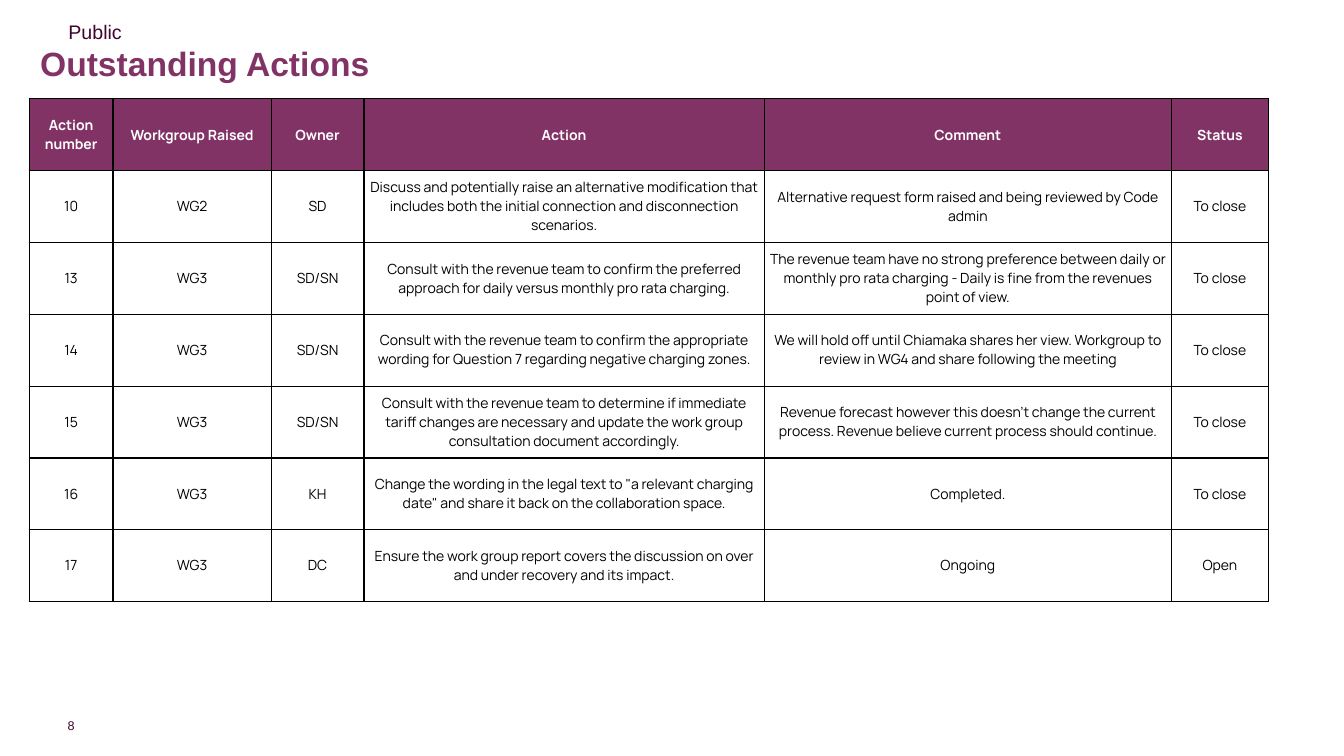
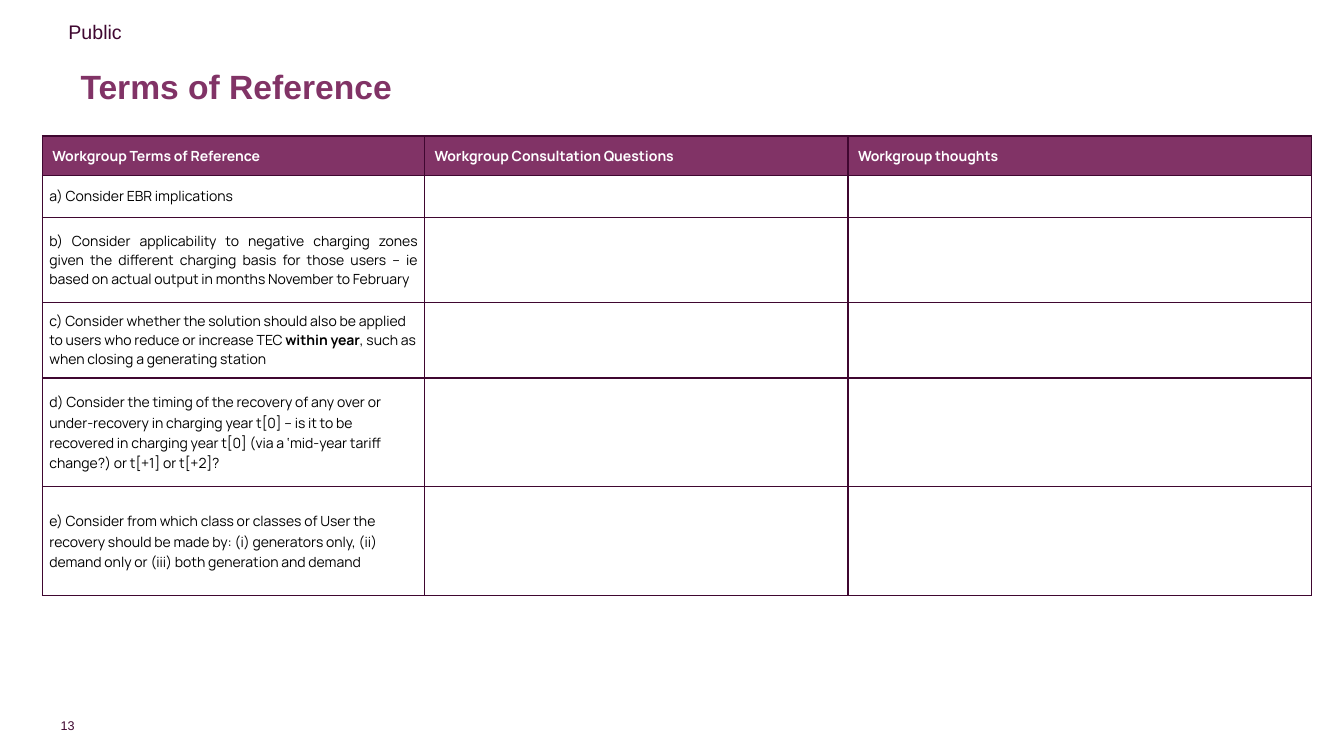
from lxml.etree import SubElement
from pptx import Presentation
from pptx.dml.color import RGBColor
from pptx.enum.text import MSO_ANCHOR, PP_ALIGN
from pptx.oxml.ns import qn
from pptx.util import Inches, Pt

W, H = 13.33, 7.5
PLUM, DARK, BLACK, WHITE = "813366", "3F0730", "000000", "FFFFFF"
HEAD_FONT, BODY_FONT = "Arial", "Manrope"
CENTER, RIGHT, JUSTIFY, LEFT = (PP_ALIGN.CENTER, PP_ALIGN.RIGHT,
                                PP_ALIGN.JUSTIFY, PP_ALIGN.LEFT)

ACTIONS = [
    ["Action number", "Workgroup Raised", "Owner", "Action", "Comment", "Status"],
    ["10", "WG2", "SD",
     "Discuss and potentially raise an alternative modification that includes "
     "both the initial connection and disconnection scenarios.",
     "Alternative request form raised and being reviewed by Code admin", "To close"],
    ["13", "WG3", "SD/SN",
     "Consult with the revenue team to confirm the preferred approach for daily "
     "versus monthly pro rata charging.",
     "The revenue team have no strong preference between daily or monthly pro rata "
     "charging - Daily is fine from the revenues point of view.", "To close"],
    ["14", "WG3", "SD/SN",
     "Consult with the revenue team to confirm the appropriate wording for "
     "Question 7 regarding negative charging zones.",
     "We will hold off until Chiamaka shares her view. Workgroup to review in WG4 "
     "and share following the meeting", "To close"],
    ["15", "WG3", "SD/SN",
     "Consult with the revenue team to determine if immediate tariff changes are "
     "necessary and update the work group consultation document accordingly.",
     "Revenue forecast however this doesn't change the current process. Revenue "
     "believe current process should continue.", "To close"],
    ["16", "WG3", "KH",
     'Change the wording in the legal text to "a relevant charging date" and share '
     "it back on the collaboration space.", "Completed.", "To close"],
    ["17", "WG3", "DC",
     "Ensure the work group report covers the discussion on over and under "
     "recovery and its impact.", "Ongoing", "Open"],
]

TERMS_HEADER = ["Workgroup Terms of Reference", "Workgroup Consultation Questions",
                "Workgroup thoughts"]
# Each term: runs of (text, bold), alignment, line spacing, space after
TERMS = [
    ([("a) Consider EBR implications", False)], JUSTIFY, 1.0, 6),
    ([("b) Consider applicability to negative charging zones given the different "
       "charging basis for those users – ie based on actual output in months "
       "November to February", False)], JUSTIFY, 1.0, 6),
    ([("c) Consider whether the solution should also be applied to users who reduce "
       "or increase TEC ", False), ("within year", True),
      (", such as when closing a generating station", False)], LEFT, 1.0, 6),
    ([("d) Consider the timing of the recovery of any over or under-recovery in "
       "charging year t[0] – is it to be recovered in charging year t[0] (via a "
       "‘mid-year tariff change?) or t[+1] or t[+2]?", False)], LEFT, 1.07, 8),
    ([("e) Consider from which class or classes of User the recovery should be made "
       "by: (i) generators only, (ii) demand only or (iii) both generation and "
       "demand", False)], LEFT, 1.07, 8),
]


def rgb(value):
    return RGBColor.from_string(value)


def write(tf, text, size=10, font=BODY_FONT, color=BLACK, bold=False,
          align=LEFT, spacing=None, after=None):
    """Fill the first paragraph with a string or a list of (text, bold) runs."""
    p = tf.paragraphs[0]
    p.alignment = align
    if spacing:
        p.line_spacing = spacing
    if after:
        p.space_after = Pt(after)
    for part, strong in [(text, bold)] if isinstance(text, str) else text:
        r = p.add_run()
        r.text = part
        r.font.name, r.font.size, r.font.bold = font, Pt(size), strong
        r.font.color.rgb = rgb(color)


def set_margins(frame, x, y):
    frame.margin_left = frame.margin_right = Inches(x)
    frame.margin_top = frame.margin_bottom = Inches(y)


def add_text(s, text, box, anchor=MSO_ANCHOR.TOP, wrap=True, margins=(0.1, 0.05), **fmt):
    tf = s.shapes.add_textbox(*map(Inches, box)).text_frame
    tf.word_wrap, tf.vertical_anchor = wrap, anchor
    set_margins(tf, *margins)
    write(tf, text, font=HEAD_FONT, **fmt)


def set_borders(cell, color):
    tcPr = cell._tc.get_or_add_tcPr()
    for side in ("lnL", "lnR", "lnT", "lnB"):
        ln = SubElement(tcPr, qn(f"a:{side}"), w=str(Pt(1)))
        SubElement(SubElement(ln, qn("a:solidFill")), qn("a:srgbClr"), val=color)


def add_grid(s, left, top, cols, rows, border):
    """Add a bordered table with a plum header row."""
    frame = s.shapes.add_table(len(rows), len(cols), Inches(left), Inches(top),
                               Inches(sum(cols)), Inches(sum(rows)))
    table = frame.table
    table.first_row = table.horz_banding = False
    for col, width in zip(table.columns, cols):
        col.width = Inches(width)
    for i, (row, height) in enumerate(zip(table.rows, rows)):
        row.height = Inches(height)
        for cell in row.cells:
            set_borders(cell, border)
            cell.vertical_anchor = MSO_ANCHOR.MIDDLE
            if i == 0:
                cell.fill.solid()
                cell.fill.fore_color.rgb = rgb(PLUM)
            else:
                cell.fill.background()
    return table


def add_page(prs, title, title_box, number):
    """Add a slide with its marking, title and page number."""
    s = prs.slides.add_slide(prs.slide_layouts[6])
    add_text(s, str(number), (0.59, 0.95 * H, 0.15, 0.15), MSO_ANCHOR.MIDDLE,
             wrap=False, margins=(0, 0), size=9, color=DARK, align=RIGHT, after=12)
    add_text(s, "Public", (0.58, 0.02 * H, 5, 0.34), size=14, color=DARK)
    add_text(s, title, title_box, MSO_ANCHOR.MIDDLE, size=24, color=PLUM,
             bold=True, spacing=0.9)
    return s


def actions_slide(prs):
    s = add_page(prs, "Outstanding Actions", (0.3, 0.2, 10.47, 0.9), 8)
    table = add_grid(s, 0.29, 0.98, [0.83, 1.57, 0.92, 3.97, 4.04, 0.96],
                     [4.99 / len(ACTIONS)] * len(ACTIONS), BLACK)
    for i, texts in enumerate(ACTIONS):
        for cell, text in zip(table.rows[i].cells, texts):
            set_margins(cell, 0.05, 0.05)
            write(cell.text_frame, text, align=CENTER, bold=i == 0,
                  color=BLACK if i else WHITE)


def terms_slide(prs):
    s = add_page(prs, "Terms of Reference", (0.7, 0.4, 10.62, 0.95), 13)
    table = add_grid(s, 0.42, 1.35, [3.79, 4.2, 4.6],
                     [0.39, 0.42, 0.84, 0.75, 1.08, 1.08], DARK)
    for cell, text in zip(table.rows[0].cells, TERMS_HEADER):
        write(cell.text_frame, text, color=WHITE, bold=True, align=JUSTIFY)
    for i, (runs, align, spacing, after) in enumerate(TERMS, start=1):
        cell = table.cell(i, 0)
        set_margins(cell, 0.07, 0)
        write(cell.text_frame, runs, align=align, spacing=spacing, after=after)


def main():
    prs = Presentation()
    prs.slide_width, prs.slide_height = Inches(W), Inches(H)
    actions_slide(prs)
    terms_slide(prs)
    prs.save("out.pptx")


if __name__ == "__main__":
    main()
